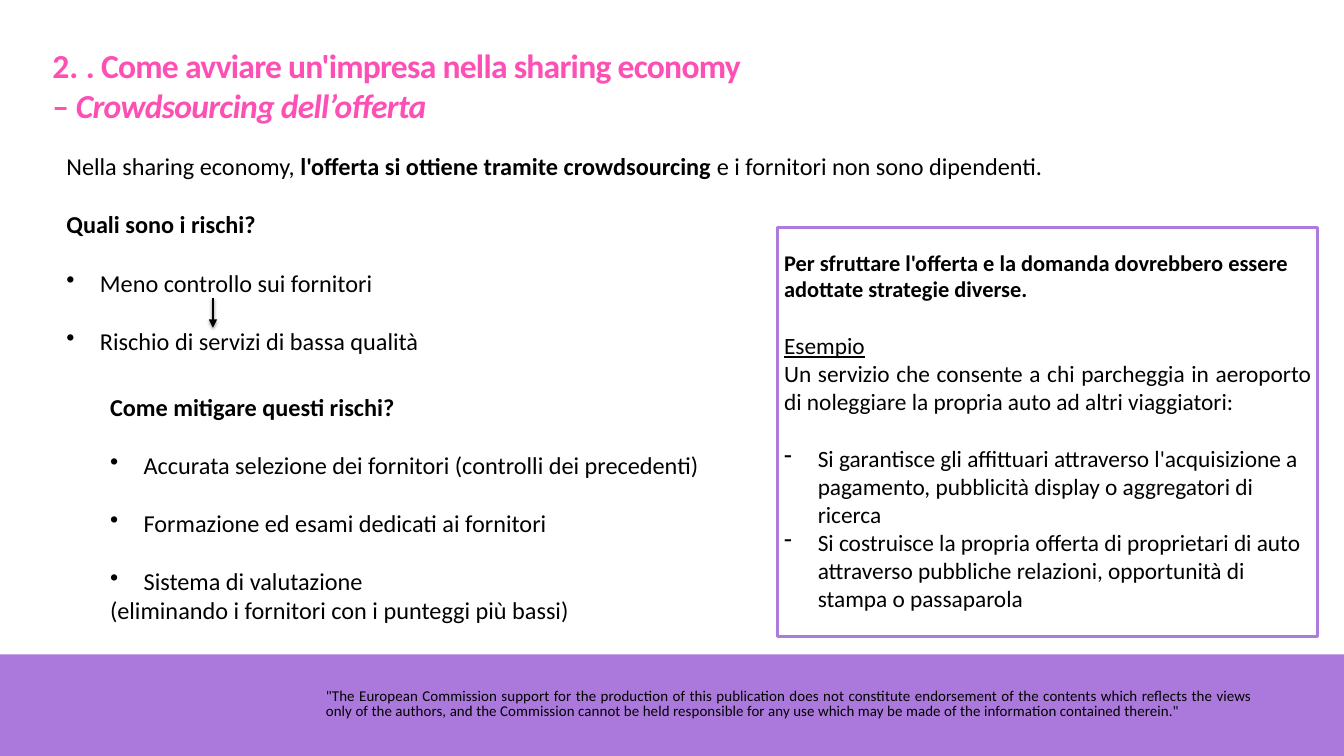
from dataclasses import dataclass
from lxml import etree
from pptx import Presentation, util as u
from pptx.dml.color import RGBColor
from pptx.enum import shapes, text
from pptx.oxml import ns


@dataclass(frozen=True)
class Theme:
    """Colours, font and type sizes of the slide."""
    font: str = "Calibri"
    ink: RGBColor = RGBColor(0x00, 0x00, 0x00)
    pink: RGBColor = RGBColor(0xFD, 0x4F, 0xB4)
    band: RGBColor = RGBColor(0xAB, 0x79, 0xDB)
    frame: RGBColor = RGBColor(0xAC, 0x7B, 0xDC)
    title: int = 36
    body: int = 26
    example: int = 25
    lead: int = 24
    notice: int = 16
    rule: int = 3
    blank_line: int = 31


@dataclass(frozen=True)
class Box:
    """A region of the slide in centimetres."""
    left: float
    top: float
    width: float
    height: float

    def lengths(self):
        """Return the region as slide lengths."""
        return [u.Cm(side) for side in (self.left, self.top, self.width, self.height)]


THEME = Theme()


def add_paragraph(frame, wording, size, color=THEME.ink, bold=False, bullet=None,
                  gap=0, align=text.PP_ALIGN.LEFT):
    """Add one paragraph to a text frame, filling its empty first one."""
    first = frame.paragraphs[0]
    paragraph = frame.add_paragraph() if first.runs else first
    paragraph.alignment = align
    if bullet:
        properties = paragraph._p.get_or_add_pPr()
        properties.set("marL", str(u.Cm(1.27)))
        properties.set("indent", str(u.Cm(-1.27)))
        etree.SubElement(properties, ns.qn("a:buChar"), char=bullet)
    if gap:
        paragraph.space_before = u.Pt(gap)
    font = paragraph.font
    font.name, font.size, font.bold = THEME.font, u.Pt(size), bold
    font.color.rgb = color
    for part in [wording] if isinstance(wording, str) else wording:
        paragraph.add_run().text = part
    return paragraph


def add_text_box(slide, box):
    """Add a wrapping text box and return its frame."""
    frame = slide.shapes.add_textbox(*box.lengths()).text_frame
    frame.word_wrap = True
    return frame


def add_rectangle(slide, box):
    """Add a plain rectangle without shadow."""
    rectangle = slide.shapes.add_shape(shapes.MSO_SHAPE.RECTANGLE, *box.lengths())
    rectangle.shadow.inherit = False
    return rectangle


def track(run, points):
    """Set the letter spacing of a run."""
    run._r.get_or_add_rPr().set("spc", str(round(points * 100)))


def add_arrow(slide, left, top, length):
    """Add a downward arrow with a soft shadow."""
    arrow = slide.shapes.add_connector(
        shapes.MSO_CONNECTOR.STRAIGHT,
        u.Cm(left), u.Cm(top), u.Cm(left), u.Cm(top + length))
    arrow.line.color.rgb = THEME.ink
    arrow.line.width = u.Pt(THEME.rule)
    etree.SubElement(arrow.line._get_or_add_ln(), ns.qn("a:tailEnd"), type="triangle")
    effects = etree.SubElement(arrow._element.spPr, ns.qn("a:effectLst"))
    shadow = etree.SubElement(effects, ns.qn("a:outerShdw"), blurRad=str(u.Pt(3.1)),
                              dist=str(u.Pt(1.8)), dir="5400000", rotWithShape="0")
    shade = etree.SubElement(shadow, ns.qn("a:srgbClr"), val=str(THEME.ink))
    etree.SubElement(shade, ns.qn("a:alpha"), val="35000")


def add_footer(slide, box):
    """Place the coloured band and its disclaimer."""
    band = add_rectangle(slide, box)
    band.fill.solid()
    band.fill.fore_color.rgb = THEME.band
    band.line.fill.background()
    frame = add_text_box(slide, Box(box.left + 12.07, box.top + 1.19, 35.56, 1.4))
    disclaimer = add_paragraph(
        frame,
        '"The European Commission support for the production of this publication does not '
        "constitute endorsement of the contents which reflects the views only of the authors, "
        "and the Commission cannot be held responsible for any use which may be made of the "
        'information contained therein."',
        THEME.notice, align=text.PP_ALIGN.JUSTIFY)
    disclaimer.line_spacing = u.Pt(16.1)
    track(disclaimer.runs[0], 0.1)


def add_title(slide, box):
    """Place the two-line title."""
    frame = add_text_box(slide, box)
    heading = add_paragraph(frame, ["2. ", ". Come avviare un'impresa nella sharing economy"],
                            THEME.title, THEME.pink, bold=True)
    topic = add_paragraph(frame, ["– ", "Crowdsourcing dell’offerta"],
                          THEME.title, THEME.pink, bold=True)
    topic.runs[1].font.italic = True
    for run in [heading.runs[1], *topic.runs]:
        track(run, -0.8)


def add_strategies(slide, box):
    """Place the framed panel with the example."""
    panel = add_rectangle(slide, box)
    panel.fill.background()
    panel.line.color.rgb = THEME.frame
    panel.line.width = u.Pt(THEME.rule)
    frame = panel.text_frame
    frame.word_wrap = True
    frame.vertical_anchor = text.MSO_ANCHOR.TOP
    frame.margin_top = u.Cm(0.81)
    add_paragraph(frame, "Per sfruttare l'offerta e la domanda dovrebbero essere "
                  "adottate strategie diverse.", THEME.lead, bold=True)
    example = add_paragraph(frame, "Esempio", THEME.example, gap=THEME.blank_line)
    example.font.underline = True
    add_paragraph(frame, "Un servizio che consente a chi parcheggia in aeroporto di noleggiare "
                  "la propria auto ad altri viaggiatori:", THEME.example,
                  align=text.PP_ALIGN.JUSTIFY)
    add_paragraph(frame, "Si garantisce gli affittuari attraverso l'acquisizione a pagamento, "
                  "pubblicità display o aggregatori di ricerca", THEME.example,
                  bullet="-", gap=THEME.blank_line)
    add_paragraph(frame, "Si costruisce la propria offerta di proprietari di auto attraverso "
                  "pubbliche relazioni, opportunità di stampa o passaparola", THEME.example,
                  bullet="-")


def add_question(frame, question, answers, gap=0):
    """Add a bold question and its bulleted answers."""
    add_paragraph(frame, question, THEME.body, bold=True, gap=gap)
    for answer in answers:
        add_paragraph(frame, answer, THEME.body, bullet="•", gap=THEME.blank_line)


def add_risks(slide, box):
    """Place the introduction, the risks and the arrow between them."""
    frame = add_text_box(slide, box)
    intro = add_paragraph(frame, ["Nella sharing economy, ",
                                  "l'offerta si ottiene tramite crowdsourcing ",
                                  "e i fornitori non sono dipendenti."], THEME.body)
    intro.runs[1].font.bold = True
    add_question(frame, "Quali sono i rischi?",
                 ["Meno controllo sui fornitori", "Rischio di servizi di bassa qualità"],
                 gap=THEME.blank_line)
    add_arrow(slide, box.left + 5.79, box.top + 5.66, 1.12)


def add_mitigation(slide, box):
    """Place the ways of reducing the risks."""
    frame = add_text_box(slide, box)
    add_question(frame, "Come mitigare questi rischi?",
                 ["Accurata selezione dei fornitori (controlli dei precedenti)",
                  "Formazione ed esami dedicati ai fornitori",
                  "Sistema di valutazione"])
    add_paragraph(frame, "(eliminando i fornitori con i punteggi più bassi)", THEME.body)


def main():
    """Build the slide and save it."""
    deck = Presentation()
    deck.slide_width, deck.slide_height = u.Cm(50.8), u.Cm(28.58)
    slide = deck.slides.add_slide(deck.slide_layouts[6])
    add_footer(slide, Box(0, 24.74, 50.8, 3.84))
    add_title(slide, Box(1.73, 1.57, 38.71, 3.33))
    add_strategies(slide, Box(29.39, 8.59, 20.42, 15.47))
    add_risks(slide, Box(2.26, 5.61, 47.55, 8.03))
    add_mitigation(slide, Box(3.91, 14.71, 44.25, 10.26))
    deck.save("out.pptx")


if __name__ == "__main__":
    main()
